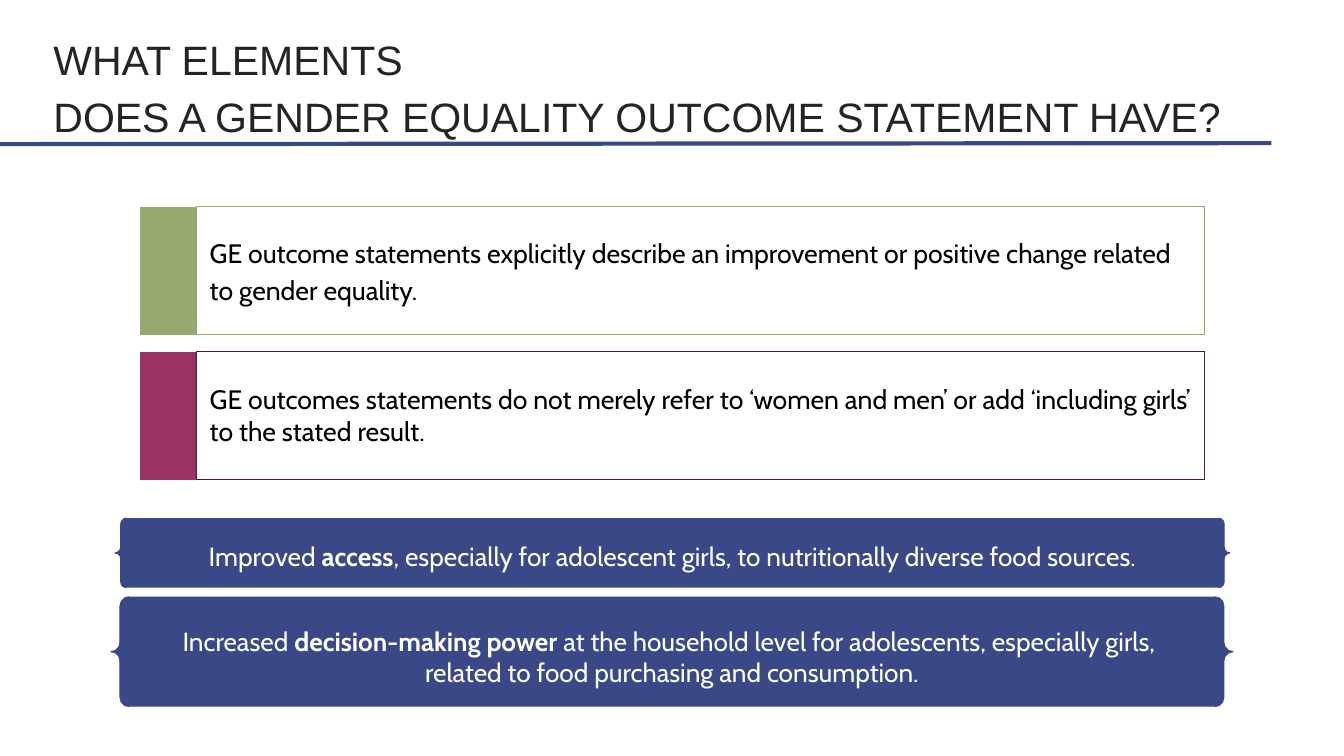
from lxml.etree import SubElement as Sub
from pptx import Presentation
from pptx.dml.color import RGBColor as RGB
from pptx.enum.shapes import MSO_CONNECTOR as Link, MSO_SHAPE as Shape
from pptx.enum.text import MSO_ANCHOR as Anchor, PP_ALIGN as Align
from pptx.oxml.ns import qn
from pptx.util import Inches, Pt

NAVY = RGB(0x3A, 0x48, 0x88)
GREEN = RGB(0x96, 0xA9, 0x71)
PLUM = RGB(0x99, 0x33, 0x65)
DARK = RGB(0x49, 0x1A, 0x36)
INK = RGB(0x27, 0x23, 0x24)
BLACK = RGB(0, 0, 0)
WHITE = RGB(255, 255, 255)
PAD = Inches(0.13)


def place(box):
    return [Inches(n) for n in box]


def pad(item):
    item.margin_left = item.margin_right = PAD
    item.margin_top = item.margin_bottom = PAD
    item.vertical_anchor = Anchor.MIDDLE


def write(frame, lines, font, size, color, align=Align.LEFT, space=1.0):
    frame.word_wrap = True
    for i, line in enumerate(lines):
        para = frame.add_paragraph() if i else frame.paragraphs[0]
        para.alignment = align
        para.line_spacing = space
        for text, bold in line:
            run = para.add_run()
            run.text = text
            run.font.name = font
            run.font.size = Pt(size)
            run.font.bold = bold
            run.font.color.rgb = color


def edge(cell, sides, color):
    props = cell._tc.get_or_add_tcPr()
    for side in "LRTB":
        line = Sub(props, qn("a:ln" + side), w=str(Pt(0.75)))
        if side in sides:
            fill = Sub(line, qn("a:solidFill"))
            Sub(fill, qn("a:srgbClr"), val=str(color))
        else:
            Sub(line, qn("a:noFill"))


def title(slide, box, lines):
    frame = slide.shapes.add_textbox(*place(box)).text_frame
    pad(frame)
    write(frame, [[(line, False)] for line in lines], "Arial", 29.3, INK, space=1.15)


def rule(slide, box):
    line = slide.shapes.add_connector(Link.STRAIGHT, *place(box))
    line.line.color.rgb = NAVY
    line.line.width = Pt(3)
    Sub(line._element.spPr, qn("a:effectLst"))


def point(slide, box, text, fill, border, space):
    table = slide.shapes.add_table(1, 2, *place(box)).table
    table.first_row = table.horz_banding = False
    tab = Inches(0.56)
    table.columns[0].width = tab
    table.columns[1].width = Inches(box[2]) - tab
    mark, body = table.cell(0, 0), table.cell(0, 1)
    edge(mark, "R", border)
    mark.fill.solid()
    mark.fill.fore_color.rgb = fill
    edge(body, "LRTB", border)
    body.fill.background()
    pad(body)
    write(body.text_frame, [[(text, False)]], "Cabin", 19, BLACK, space=space)


def sample(slide, box, lines):
    brace = slide.shapes.add_shape(Shape.DOUBLE_BRACE, *place(box))
    brace.shadow.inherit = False
    brace.fill.solid()
    brace.fill.fore_color.rgb = NAVY
    brace.line.color.rgb = NAVY
    brace.line.width = Pt(0.75)
    pad(brace.text_frame)
    write(brace.text_frame, lines, "Cabin", 18.7, WHITE, Align.CENTER)


def main():
    deck = Presentation()
    deck.slide_width, deck.slide_height = Inches(13.33), Inches(7.5)
    slide = deck.slides.add_slide(deck.slide_layouts[6])
    title(slide, (0.4, 0.24, 12.21, 1.18),
          ["WHAT ELEMENTS", "DOES A GENDER EQUALITY OUTCOME STATEMENT HAVE?"])
    rule(slide, (0, 1.43, 12.61, 1.42))
    points = [
        ("GE outcome statements explicitly describe an improvement or positive "
         "change related to gender equality.", GREEN, GREEN, 1.15),
        ("GE outcomes statements do not merely refer to ‘women and men’ or add "
         "‘including girls’ to the stated result.", PLUM, DARK, 1.0),
    ]
    for i, item in enumerate(points):
        point(slide, (1.39, 2.05 + 1.44 * i, 10.56, 1.27), *item)
    sample(slide, (1.14, 5.14, 11.06, 0.69), [
        [("Improved ", False), ("access", True),
         (", especially for adolescent girls, to nutritionally diverse food sources.", False)],
    ])
    sample(slide, (1.1, 5.92, 11.13, 1.09), [
        [("Increased ", False), ("decision-making power ", True),
         ("at the household level for adolescents, especially girls, ", False)],
        [("related to food purchasing and consumption.", False)],
    ])
    deck.save("out.pptx")


if __name__ == "__main__":
    main()
